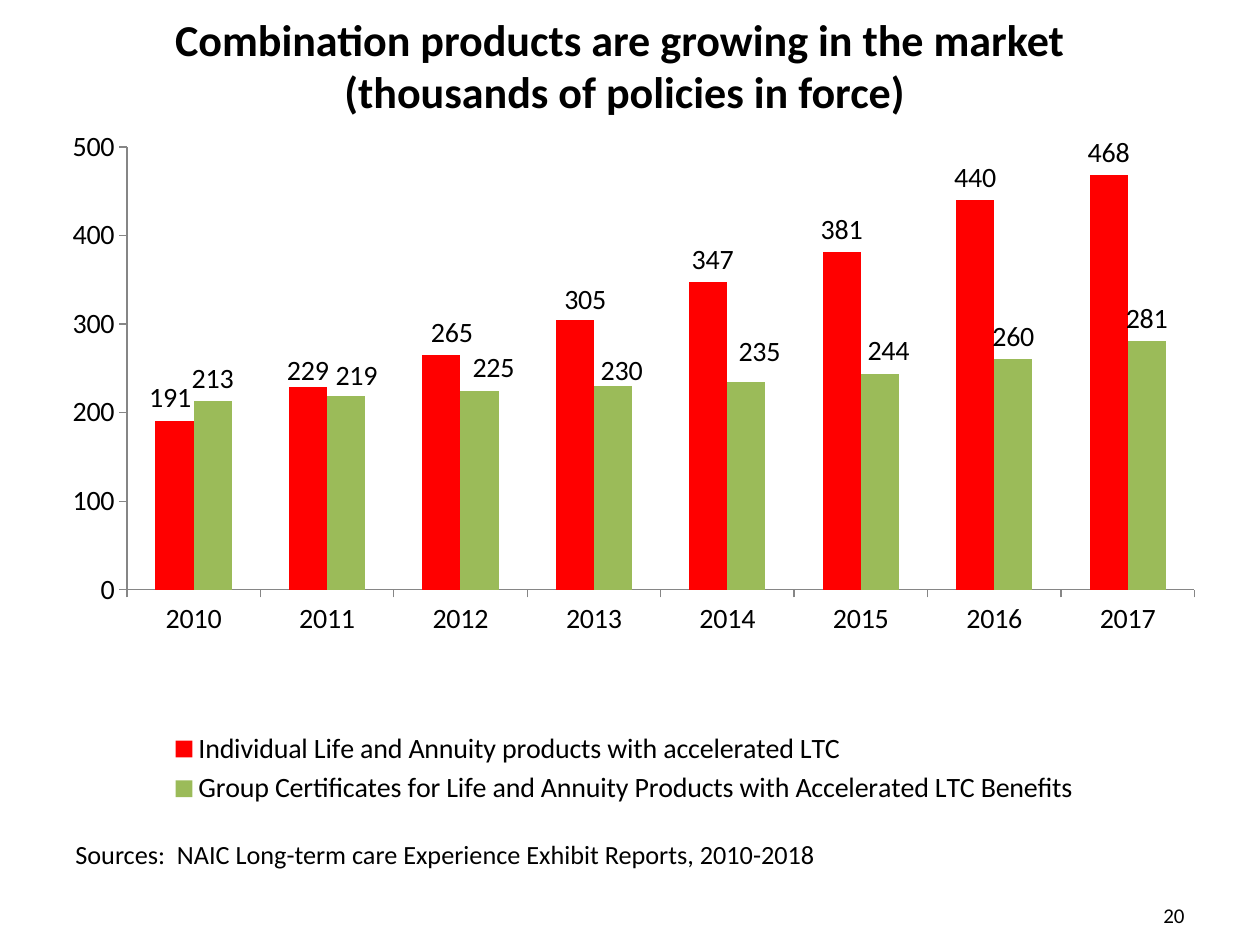
from lxml import etree
from pptx import Presentation
from pptx.chart.data import CategoryChartData
from pptx.dml.color import RGBColor
from pptx.enum.chart import XL_CHART_TYPE, XL_LABEL_POSITION, XL_LEGEND_POSITION, XL_TICK_MARK
from pptx.enum.text import MSO_ANCHOR, MSO_AUTO_SIZE, PP_ALIGN
from pptx.oxml.ns import qn
from pptx.util import Pt

COLUMNS = XL_CHART_TYPE.COLUMN_CLUSTERED
OUTSIDE_END = XL_LABEL_POSITION.OUTSIDE_END
LEGEND_BOTTOM = XL_LEGEND_POSITION.BOTTOM
TICK_OUTSIDE = XL_TICK_MARK.OUTSIDE
LEFT, CENTER, RIGHT = PP_ALIGN.LEFT, PP_ALIGN.CENTER, PP_ALIGN.RIGHT
TOP, MIDDLE = MSO_ANCHOR.TOP, MSO_ANCHOR.MIDDLE
NO_AUTOFIT = MSO_AUTO_SIZE.NONE

THEME = {
    "font": "Calibri",
    "text": RGBColor(0, 0, 0),
    "axis": RGBColor(0x86, 0x86, 0x86),
    "individual": RGBColor(0xFF, 0, 0),
    "group": RGBColor(0x9B, 0xBB, 0x59),
    "title_size": 25.2,
    "chart_size": 16,
    "source_size": 15,
    "number_size": 12,
}

TITLE = "Combination products are growing in the market \v(thousands of policies in force)"
SOURCE = "Sources:  NAIC Long-term care Experience Exhibit Reports, 2010-2018"
SLIDE_NUMBER = "20"
YEARS = [str(year) for year in range(2010, 2018)]
# Label shifts: point index -> (right, down) in points
SERIES = [
    {
        "name": "Individual Life and Annuity products with accelerated LTC",
        "values": [191, 229, 265, 305, 347, 381, 440, 468],
        "color": "individual",
        "shifts": {0: (-2.5, 0), 1: (0, 3.5), 2: (6, 0), 3: (6, 1.5), 4: (2.5, 0)},
    },
    {
        "name": "Group Certificates for Life and Annuity Products with Accelerated LTC Benefits",
        "values": [213, 219, 225, 230, 235, 244, 260, 281],
        "color": "group",
        "shifts": {1: (6, 1.5), 2: (8, 0), 3: (5, 4), 4: (7.5, -4), 5: (5, 0)},
    },
]

# Left, top, width, height in points
TITLE_BOX = (18, 13.7, 678.2, 46.8)
CHART_BOX = (5.8, 70.6, 702, 393.1)
SOURCE_BOX = (36, 475.2, 486.7, 25.2)
NUMBER_BOX = (516.2, 508.3, 167.8, 28.8)
PLOT_AREA = {"x": 0.095, "y": 0.034, "w": 0.869, "h": 0.644}


def points(box):
    return [Pt(length) for length in box]


def style_font(font, size, bold=False):
    font.name = THEME["font"]
    font.size = Pt(size)
    font.bold = bold
    font.color.rgb = THEME["text"]


def fill_text(shape, text, size, alignment=LEFT, anchor=TOP, bold=False):
    frame = shape.text_frame
    frame.text = text
    frame.word_wrap = True
    frame.auto_size = NO_AUTOFIT
    frame.vertical_anchor = anchor
    paragraph = frame.paragraphs[0]
    paragraph.alignment = alignment
    for run in paragraph.runs:
        style_font(run.font, size, bold)


def manual_layout(parent, settings):
    """Write a c:layout with the given settings into a chart element."""
    layout = parent.find(qn("c:layout"))
    if layout is None:
        layout = etree.Element(qn("c:layout"))
        is_label = parent.tag == qn("c:dLbl")
        parent.insert(1 if is_label else 0, layout)
    manual = etree.SubElement(layout, qn("c:manualLayout"))
    for name, value in settings.items():
        etree.SubElement(manual, qn(f"c:{name}")).set("val", str(value))


def style_series(series, content):
    series.format.fill.solid()
    series.format.fill.fore_color.rgb = THEME[content["color"]]
    series.invert_if_negative = False
    labels = series.data_labels
    labels.show_value = True
    labels.position = OUTSIDE_END
    labels.number_format = "#,##0"
    labels.number_format_is_linked = False
    style_font(labels.font, THEME["chart_size"])
    for index, (right, down) in content["shifts"].items():
        label = series.points[index].data_label
        label.position = OUTSIDE_END
        style_font(label.font, THEME["chart_size"])
        element = labels._element.find(f"{qn('c:dLbl')}[{qn('c:idx')}][@val]")
        for element in labels._element.findall(qn("c:dLbl")):
            if element.find(qn("c:idx")).get("val") == str(index):
                manual_layout(element, {"x": round(right / CHART_BOX[2], 4),
                                        "y": round(down / CHART_BOX[3], 4)})


def add_policy_chart(slide):
    data = CategoryChartData(number_format="#,##0")
    data.categories = YEARS
    for content in SERIES:
        data.add_series(content["name"], content["values"])
    chart = slide.shapes.add_chart(COLUMNS, *points(CHART_BOX), data).chart
    chart.has_title = False
    style_font(chart.font, THEME["chart_size"])
    chart.has_legend = True
    chart.legend.position = LEGEND_BOTTOM
    chart.legend.include_in_layout = False

    plot = chart.plots[0]
    plot.gap_width = 150
    plot.overlap = 0
    plot.vary_by_categories = False
    for series, content in zip(plot.series, SERIES):
        style_series(series, content)

    for axis in (chart.category_axis, chart.value_axis):
        axis.has_major_gridlines = False
        axis.major_tick_mark = TICK_OUTSIDE
        axis.format.line.color.rgb = THEME["axis"]
        axis.format.line.width = Pt(0.75)
    values = chart.value_axis
    values.minimum_scale, values.maximum_scale, values.major_unit = 0, 500, 100
    values.tick_labels.number_format = "#,##0"
    values.tick_labels.number_format_is_linked = False

    plot_area = chart._chartSpace.find(f".//{qn('c:plotArea')}")
    manual_layout(plot_area, {"layoutTarget": "inner", "xMode": "edge",
                              "yMode": "edge", **PLOT_AREA})


def main():
    presentation = Presentation()
    presentation.slide_width, presentation.slide_height = Pt(720), Pt(540)
    slide = presentation.slides.add_slide(presentation.slide_layouts[5])

    title = slide.shapes.title
    title.left, title.top, title.width, title.height = points(TITLE_BOX)
    fill_text(title, TITLE, THEME["title_size"], CENTER, MIDDLE, bold=True)
    add_policy_chart(slide)
    source = slide.shapes.add_textbox(*points(SOURCE_BOX))
    fill_text(source, SOURCE, THEME["source_size"])
    number = slide.shapes.add_textbox(*points(NUMBER_BOX))
    fill_text(number, SLIDE_NUMBER, THEME["number_size"], RIGHT, MIDDLE)
    presentation.save("out.pptx")


if __name__ == "__main__":
    main()
